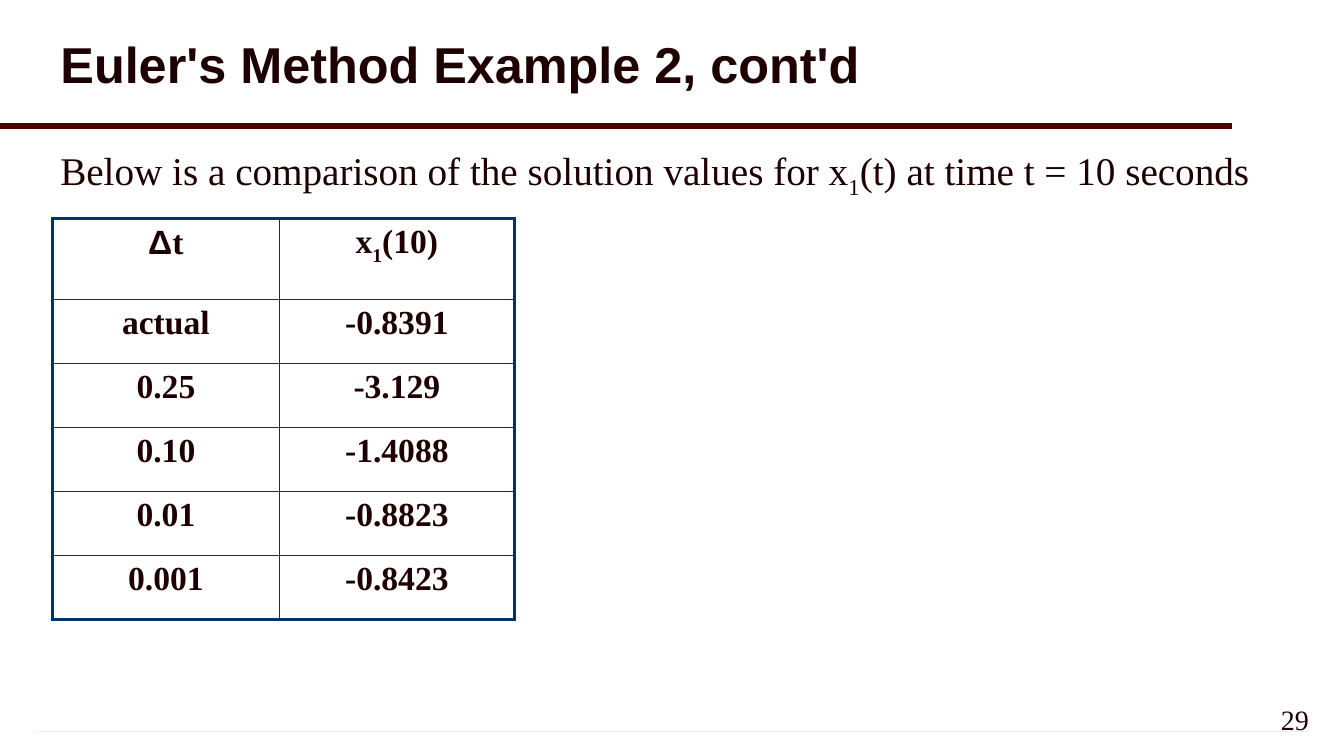
from lxml import etree
from pptx import Presentation
from pptx.dml.color import RGBColor
from pptx.enum.shapes import MSO_CONNECTOR, MSO_SHAPE
from pptx.enum.text import MSO_ANCHOR, PP_ALIGN
from pptx.oxml.ns import qn
from pptx.util import Pt

LEFT, CENTER, RIGHT = PP_ALIGN.LEFT, PP_ALIGN.CENTER, PP_ALIGN.RIGHT
MIDDLE = MSO_ANCHOR.MIDDLE
STRAIGHT = MSO_CONNECTOR.STRAIGHT
RECTANGLE = MSO_SHAPE.RECTANGLE

COLORS = {
    "text": "1E0000",
    "title_rule": "500000",
    "border": "003366",
    "footer_start": "CC99FF",
    "footer_end": "F3EBFF",
}
HEADING_FONT, BODY_FONT = "Arial", "Times New Roman"

TITLE = "Euler's Method Example 2, cont'd"
INTRO = ["Below is a comparison of the solution values for x", "1", "(t) at time t = 10 seconds"]
PAGE_NUMBER = ["29"]
COMPARISON = [
    (["Δ", "t"], ["x", "1", "(10)"]),
    (["actual"], ["-0.8391"]),
    (["0.25"], ["-3.129"]),
    (["0.10"], ["-1.4088"]),
    (["0.01"], ["-0.8823"]),
    (["0.001"], ["-0.8423"]),
]
COLUMN_WIDTHS = [162, 168]
HEADER_HEIGHT, ROW_HEIGHT = 57.6, 45.8
OUTER_BORDER, INNER_BORDER = 2.25, 1


def rgb(name):
    return RGBColor.from_string(COLORS[name])


def write(paragraph, pieces, size, align=LEFT, bold=False):
    paragraph.alignment = align
    for piece in pieces:
        run = paragraph.add_run()
        run.text = piece
        run.font.size = Pt(size)
        run.font.bold = bold
        run.font.name = HEADING_FONT if piece == "Δ" else BODY_FONT
        run.font.color.rgb = rgb("text")
        if len(pieces) == 3 and piece == pieces[1]:
            run.font._element.set("baseline", "-25000")


def add_text(slide, bounds, pieces, size, align=LEFT):
    frame = slide.shapes.add_textbox(*map(Pt, bounds)).text_frame
    frame.word_wrap = True
    write(frame.paragraphs[0], pieces, size, align)


def add_border(cell, side, width):
    line = etree.SubElement(cell._tc.get_or_add_tcPr(), qn(f"a:ln{side}"), w=str(Pt(width)))
    fill = etree.SubElement(line, qn("a:solidFill"))
    etree.SubElement(fill, qn("a:srgbClr"), val=COLORS["border"])


def add_comparison(slide):
    last_row, last_column = len(COMPARISON) - 1, len(COLUMN_WIDTHS) - 1
    height = HEADER_HEIGHT + last_row * ROW_HEIGHT
    table = slide.shapes.add_table(
        last_row + 1, last_column + 1, Pt(37.5), Pt(156.2), Pt(sum(COLUMN_WIDTHS)), Pt(height)
    ).table
    table.first_row = table.horz_banding = False
    for column, width in zip(table.columns, COLUMN_WIDTHS):
        column.width = Pt(width)
    for r, values in enumerate(COMPARISON):
        table.rows[r].height = Pt(ROW_HEIGHT if r else HEADER_HEIGHT)
        for c, pieces in enumerate(values):
            cell = table.cell(r, c)
            write(cell.text_frame.paragraphs[0], pieces, 24, CENTER, True)
            on_edge = {"L": c == 0, "R": c == last_column, "T": r == 0, "B": r == last_row}
            for side, outer in on_edge.items():
                add_border(cell, side, OUTER_BORDER if outer else INNER_BORDER)
            cell.fill.background()


def add_rules(slide):
    footer = slide.shapes.add_shape(RECTANGLE, Pt(24), Pt(522), Pt(911.5), Pt(0.75))
    footer.shadow.inherit = False
    footer.line.fill.background()
    footer.fill.gradient()
    for stop, name in zip(footer.fill.gradient_stops, ("footer_start", "footer_end")):
        stop.color.rgb = rgb(name)

    title_rule = slide.shapes.add_connector(STRAIGHT, Pt(0), Pt(90), Pt(880), Pt(90))
    title_rule.line.color.rgb = rgb("title_rule")
    title_rule.line.width = Pt(4)
    etree.SubElement(title_rule._element.spPr, qn("a:effectLst"))


def add_title(slide):
    title = slide.shapes.title
    title.left, title.top, title.width, title.height = map(Pt, (36, 6, 878.4, 84))
    frame = title.text_frame
    frame.text = TITLE
    frame.vertical_anchor = MIDDLE
    paragraph = frame.paragraphs[0]
    paragraph.alignment = LEFT
    paragraph.line_spacing = 0.9
    font = paragraph.runs[0].font
    font.name, font.size, font.bold = HEADING_FONT, Pt(36), True
    font.color.rgb = rgb("text")


def main():
    deck = Presentation()
    deck.slide_width, deck.slide_height = Pt(960), Pt(540)
    slide = deck.slides.add_slide(deck.slide_layouts[5])
    add_rules(slide)
    add_title(slide)
    add_comparison(slide)
    add_text(slide, (36, 101, 894, 41), INTRO, 28)
    add_text(slide, (894, 498, 48, 36), PAGE_NUMBER, 20, RIGHT)
    deck.save("out.pptx")


if __name__ == "__main__":
    main()
